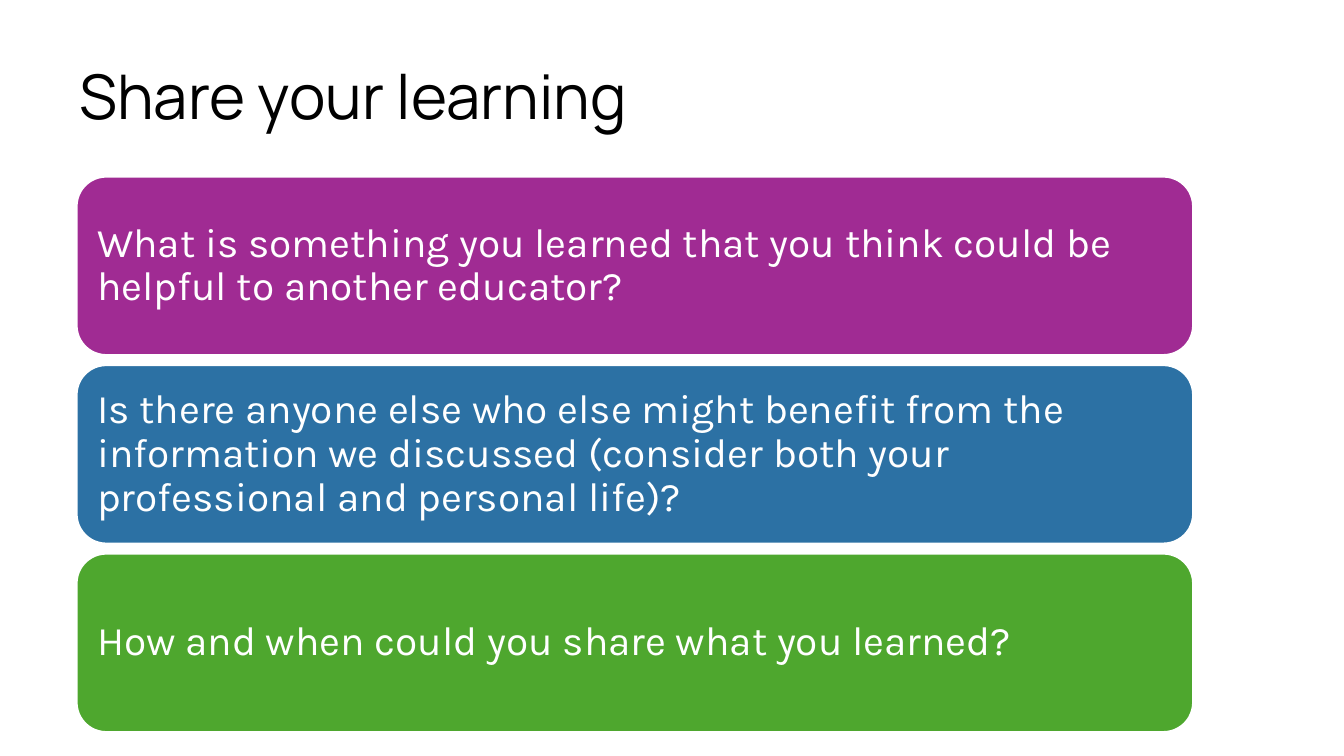
from pptx import Presentation
from pptx.dml.color import RGBColor
from pptx.enum import shapes, text
from pptx.util import Cm, Pt

TITLE = "Share your learning"
QUESTIONS = [
    ("What is something you learned that you think could be helpful to another educator?",
     "A02B93"),
    ("Is there anyone else who else might benefit from the information we discussed "
     "(consider both your professional and personal life)?", "2C71A4"),
    ("How and when could you share what you learned?", "4EA72E"),
]

# Card layout in centimetres
CARD_LEFT, CARD_TOP = 1.93, 4.45
CARD_WIDTH, CARD_HEIGHT = 28.14, 4.5
CARD_GAP = 0.25
CARD_INSET = 0.3


def color(hex_code):
    return RGBColor.from_string(hex_code)


def write(shape, words, font_name, size, hex_code):
    frame = shape.text_frame
    frame.word_wrap = True
    frame.vertical_anchor = text.MSO_ANCHOR.MIDDLE
    para = frame.paragraphs[0]
    para.text = words
    para.alignment = text.PP_ALIGN.LEFT
    para.line_spacing = 0.9
    para.font.name = font_name
    para.font.size = Pt(size)
    para.font.color.rgb = color(hex_code)
    return frame


def add_card(page, row, question, fill):
    top = CARD_TOP + row * (CARD_HEIGHT + CARD_GAP)
    card = page.shapes.add_shape(
        shapes.MSO_SHAPE.ROUNDED_RECTANGLE,
        Cm(CARD_LEFT), Cm(top), Cm(CARD_WIDTH), Cm(CARD_HEIGHT))
    card.shadow.inherit = False
    card.fill.solid()
    card.fill.fore_color.rgb = color(fill)
    card.line.color.rgb = color("FFFFFF")
    card.line.width = Pt(1.5)
    frame = write(card, question, "Karla", 29, "FFFFFF")
    frame.margin_left = frame.margin_right = Cm(CARD_INSET)
    frame.margin_top = frame.margin_bottom = Cm(CARD_INSET)


def main():
    deck = Presentation()
    deck.slide_width, deck.slide_height = Cm(33.87), Cm(19.05)
    page = deck.slides.add_slide(deck.slide_layouts[6])

    # Title
    title_box = page.shapes.add_textbox(Cm(1.75), Cm(0.66), Cm(29.21), Cm(3.68))
    write(title_box, TITLE, "Manrope", 44, "000000")

    # Question cards
    for row, (question, fill) in enumerate(QUESTIONS):
        add_card(page, row, question, fill)

    deck.save("out.pptx")


if __name__ == "__main__":
    main()
